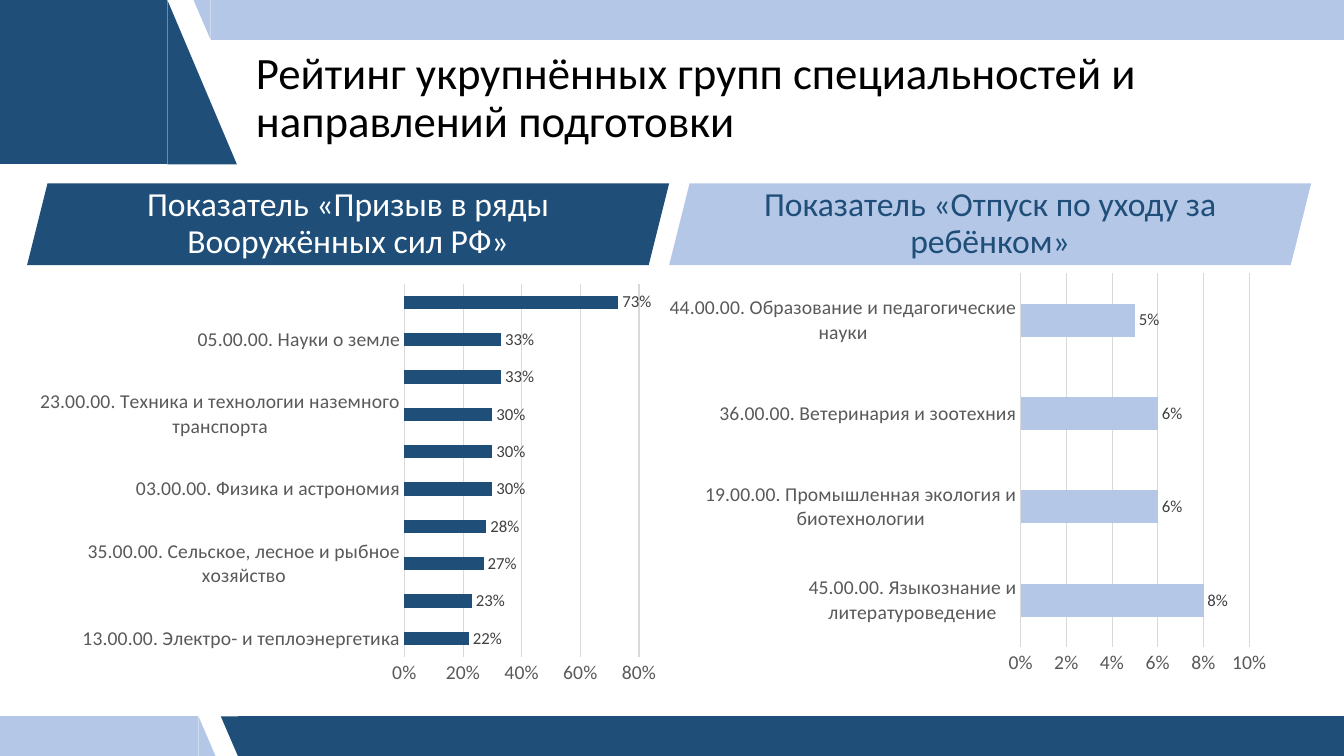
from dataclasses import dataclass

from pptx import Presentation
from pptx.chart.data import CategoryChartData
from pptx.dml.color import RGBColor
from pptx.enum.chart import XL_CHART_TYPE, XL_LABEL_POSITION, XL_TICK_MARK
from pptx.enum.shapes import MSO_SHAPE
from pptx.enum.text import MSO_ANCHOR, PP_ALIGN
from pptx.util import Pt

BAR = XL_CHART_TYPE.BAR_CLUSTERED
OUTSIDE_END = XL_LABEL_POSITION.OUTSIDE_END
NO_TICK = XL_TICK_MARK.NONE
BLOCK = MSO_SHAPE.FLOWCHART_PROCESS
TRIANGLE = MSO_SHAPE.RIGHT_TRIANGLE
PARALLELOGRAM = MSO_SHAPE.PARALLELOGRAM
MIDDLE = MSO_ANCHOR.MIDDLE
LEFT, CENTER = PP_ALIGN.LEFT, PP_ALIGN.CENTER


@dataclass(frozen=True)
class Theme:
    font: str = "Calibri"
    navy: str = "1F4E79"
    pale: str = "B4C7E7"
    black: str = "000000"
    white: str = "FFFFFF"
    axis_text: str = "595959"
    label_text: str = "404040"
    grid: str = "D9D9D9"
    title_size: float = 32
    banner_size: float = 24
    axis_size: float = 14
    label_size: float = 12
    line_width: float = 0.75


THEME = Theme()
PAGE_WIDTH, PAGE_HEIGHT = 960, 540
STRIP_HEIGHT = 28.3
STRIP_SLANT = 12.2

# Bars run from the bottom of each chart to the top; some have no label
CONSCRIPTION = [
    ("13.00.00. Электро- и теплоэнергетика", 0.22),
    ("", 0.23),
    ("35.00.00. Сельское, лесное и рыбное хозяйство", 0.27),
    ("", 0.28),
    ("03.00.00. Физика и астрономия", 0.30),
    ("", 0.30),
    ("23.00.00. Техника и технологии наземного транспорта", 0.30),
    ("", 0.33),
    ("05.00.00. Науки о земле", 0.33),
    ("", 0.73),
]
CHILD_CARE = [
    ("45.00.00. Языкознание и литературоведение", 0.08),
    ("19.00.00. Промышленная экология и биотехнологии", 0.06),
    ("36.00.00. Ветеринария и зоотехния", 0.06),
    ("44.00.00. Образование и педагогические науки", 0.05),
]


def style_font(font, size, color):
    font.name = THEME.font
    font.size = Pt(size)
    font.color.rgb = RGBColor.from_string(color)


def style_line(line, color):
    line.color.rgb = RGBColor.from_string(color)
    line.width = Pt(THEME.line_width)


def write_text(box, text, *, size, color, align=LEFT, insets=(7.2, 3.6)):
    frame = box.text_frame
    frame.word_wrap = True
    frame.vertical_anchor = MIDDLE
    frame.margin_left = frame.margin_right = Pt(insets[0])
    frame.margin_top = frame.margin_bottom = Pt(insets[1])
    para = frame.paragraphs[0]
    para.alignment = align
    para.line_spacing = 0.9
    span = para.add_run()
    span.text = text
    style_font(span.font, size, color)


class SlideBuilder:
    def __init__(self, page, theme):
        self.page = page
        self.theme = theme

    def shape(self, kind, left, top, width, height, color, rotation=0):
        shape = self.page.shapes.add_shape(
            kind, Pt(left), Pt(top), Pt(width), Pt(height))
        shape.shadow.inherit = False
        shape.fill.solid()
        shape.fill.fore_color.rgb = RGBColor.from_string(color)
        shape.line.fill.background()
        shape.rotation = rotation
        return shape

    def right_slanted(self, top, width, height, slant, color):
        """Block at the left edge whose right side slants outwards."""
        self.shape(BLOCK, 0, top, width, height, color)
        self.shape(TRIANGLE, width, top, slant, height, color)

    def left_slanted(self, left, top, height, slant, color):
        """Block reaching the right edge whose left side slants."""
        start = left + slant
        self.shape(BLOCK, start, top, PAGE_WIDTH - start, height, color, 180)
        self.shape(TRIANGLE, left, top, slant, height, color, 180)

    def title(self, text, left, top, width, height):
        box = self.page.shapes.add_textbox(
            Pt(left), Pt(top), Pt(width), Pt(height))
        write_text(box, text, size=self.theme.title_size,
                   color=self.theme.black)

    def banner(self, text, left, top, width, height, fill, color):
        box = self.shape(PARALLELOGRAM, left, top, width, height, fill)
        write_text(box, text, size=self.theme.banner_size, color=color,
                   align=CENTER, insets=(0, 8))

    def bar_chart(self, shares, left, top, width, height, color):
        theme = self.theme
        data = CategoryChartData(number_format="0%")
        data.categories = [group for group, _ in shares]
        data.add_series("", [share for _, share in shares])
        chart = self.page.shapes.add_chart(
            BAR, Pt(left), Pt(top), Pt(width), Pt(height), data).chart
        chart.has_legend = False
        chart.has_title = False
        style_font(chart.font, theme.axis_size, theme.axis_text)

        # Bars and their labels
        plot = chart.plots[0]
        plot.gap_width = 182
        plot.vary_by_categories = False
        fill = plot.series[0].format.fill
        fill.solid()
        fill.fore_color.rgb = RGBColor.from_string(color)
        plot.has_data_labels = True
        labels = plot.data_labels
        labels.show_value = True
        labels.number_format = "0%"
        labels.number_format_is_linked = False
        labels.position = OUTSIDE_END
        style_font(labels.font, theme.label_size, theme.label_text)

        # Axes and grid
        for axis in (chart.category_axis, chart.value_axis):
            axis.major_tick_mark = axis.minor_tick_mark = NO_TICK
            style_font(axis.tick_labels.font, theme.axis_size, theme.axis_text)
        chart.category_axis.has_major_gridlines = False
        style_line(chart.category_axis.format.line, theme.grid)
        values = chart.value_axis
        values.format.line.fill.background()
        values.has_major_gridlines = True
        style_line(values.major_gridlines.format.line, theme.grid)
        values.tick_labels.number_format = "0%"
        values.tick_labels.number_format_is_linked = False


def main():
    deck = Presentation()
    deck.slide_width, deck.slide_height = Pt(PAGE_WIDTH), Pt(PAGE_HEIGHT)
    page = deck.slides.add_slide(deck.slide_layouts[6])
    builder = SlideBuilder(page, THEME)

    # Slanted strips along the bottom and top edges, and the corner block
    bottom = PAGE_HEIGHT - STRIP_HEIGHT
    builder.left_slanted(157.7, bottom, STRIP_HEIGHT, STRIP_SLANT, THEME.navy)
    builder.right_slanted(bottom, 141.8, STRIP_HEIGHT, STRIP_SLANT, THEME.pale)
    builder.left_slanted(138.2, 0, STRIP_HEIGHT, STRIP_SLANT, THEME.pale)
    builder.right_slanted(0, 119.5, 117.4, 49.7, THEME.navy)

    # Title
    builder.title(
        "Рейтинг укрупнённых групп специальностей и направлений подготовки",
        175.7, 36, 720.7, 69.8)

    # Banners side by side
    left, width = 19.4, 458.6
    builder.banner("Показатель «Призыв в ряды Вооружённых сил РФ»",
                   left, 131, width, 58.3, THEME.navy, THEME.white)
    builder.banner("Показатель «Отпуск по уходу за ребёнком»",
                   left + width, 131, width, 58.3, THEME.pale, THEME.navy)

    # Charts under the banners
    builder.bar_chart(CONSCRIPTION, left, 196.6, width, 298.8, THEME.navy)
    builder.bar_chart(CHILD_CARE, 469.4, 189.4, 444.2, 298.8, THEME.pale)

    deck.save("out.pptx")


if __name__ == "__main__":
    main()
